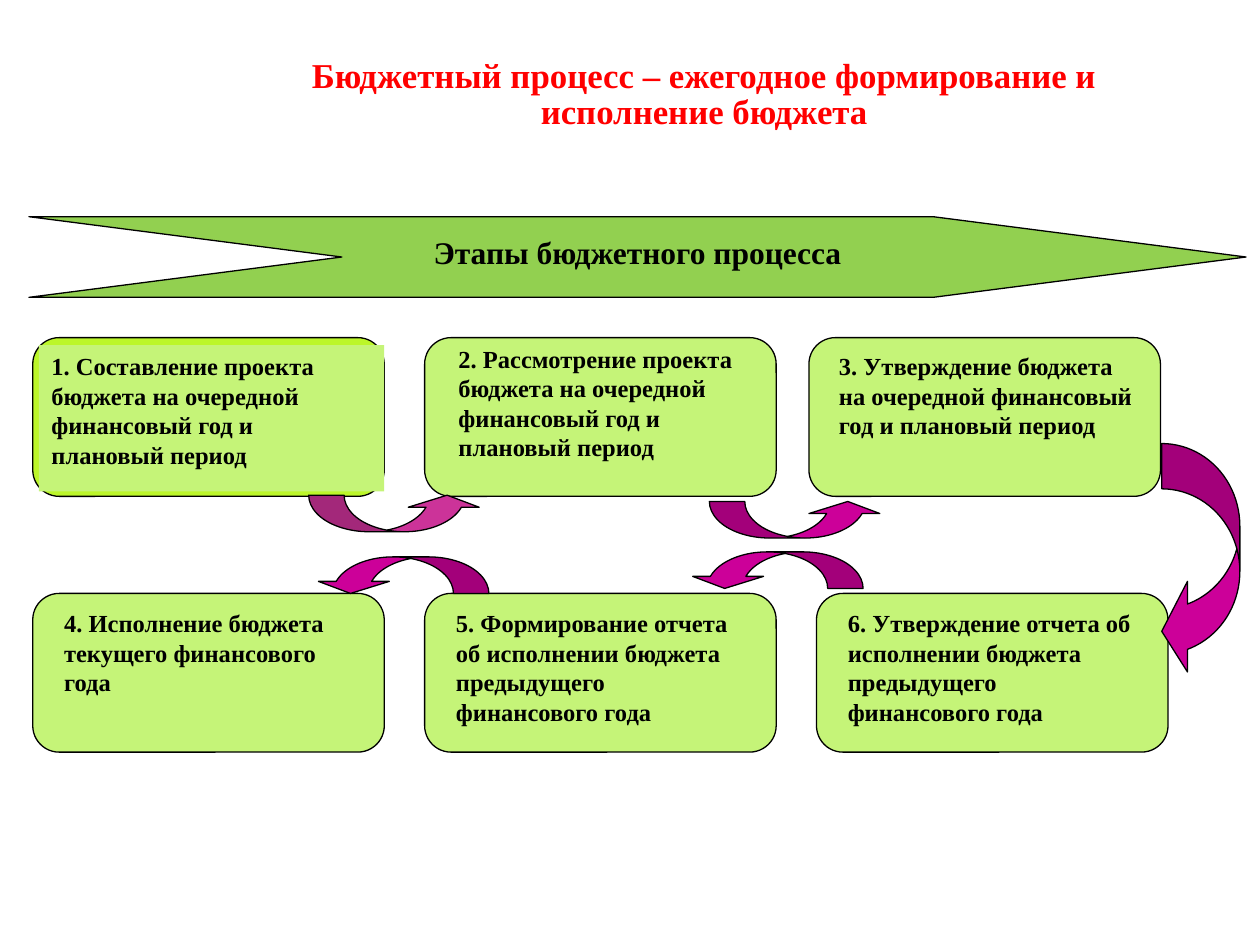
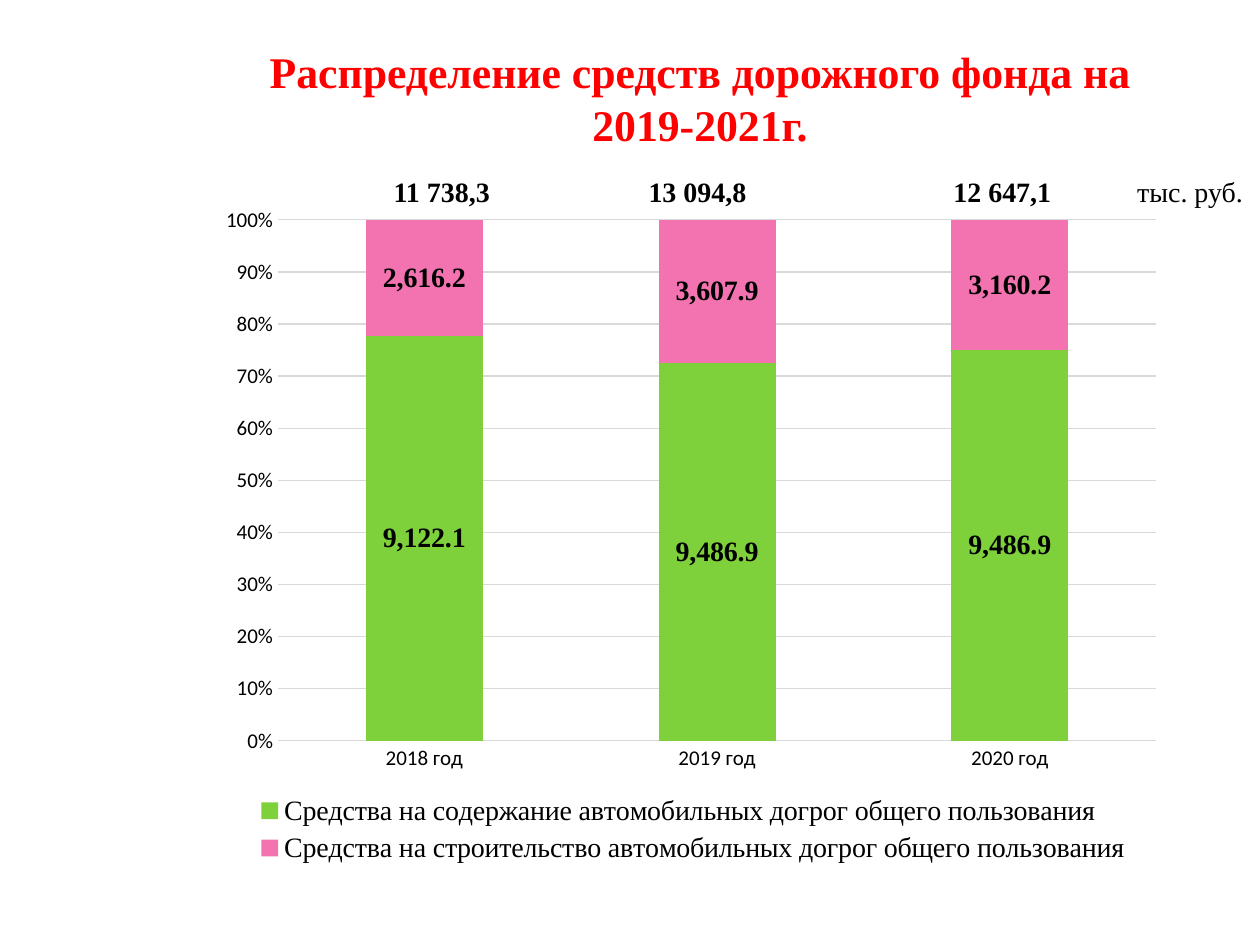
import pptx
import pptx.chart.data
import pptx.dml.color
import pptx.enum.chart
import pptx.enum.shapes
import pptx.enum.text
import pptx.oxml
import pptx.util

RGB = pptx.dml.color.RGBColor
SHAPE = pptx.enum.shapes.MSO_SHAPE
ALIGN = pptx.enum.text.PP_ALIGN
Pt = pptx.util.Pt

BLACK = RGB(0x00, 0x00, 0x00)
TITLE_RED = RGB(0xFF, 0x00, 0x00)
BANNER_GREEN = RGB(0x92, 0xD0, 0x50)
CARD_GREEN = RGB(0xC5, 0xF4, 0x78)
FIRST_CARD_GREEN = RGB(0xBC, 0xF6, 0x2A)
ARROW_MAGENTA = RGB(0xCC, 0x00, 0x99)
FIRST_ARROW_PINK = RGB(0xCC, 0x33, 0x99)
ROAD_GREEN = RGB(0x7F, 0xD1, 0x3B)
ROAD_PINK = RGB(0xF2, 0x73, 0xAF)
GRID_GREY = RGB(0xD9, 0xD9, 0xD9)
SERIF = "Times New Roman"
SANS = "Calibri"

deck = pptx.Presentation()
deck.slide_width = pptx.util.Inches(10)
deck.slide_height = pptx.util.Inches(7.5)
blank = deck.slide_layouts[6]
CELL = deck.slide_width / 100  # the slide is a grid of 100 columns by 75 rows


def add_text(slide, text, box, size=14, bold=True, color=BLACK, align=ALIGN.LEFT,
             spacing=None, inset_top=0.5, fill=None):
    """Place text in a box given in grid cells: left, top, width, height."""
    holder = slide.shapes.add_textbox(*[round(n * CELL) for n in box])
    if fill is not None:
        holder.fill.solid()
        holder.fill.fore_color.rgb = fill
    frame = holder.text_frame
    frame.word_wrap = True
    frame.margin_top = round(inset_top * CELL)
    frame.text = text
    for paragraph in frame.paragraphs:
        paragraph.alignment = align
        paragraph.line_spacing = spacing
        font = paragraph.runs[0].font
        font.name, font.size, font.bold = SERIF, Pt(size), bold
        font.color.rgb = color


def add_outlined(slide, kind, box, fill, adjustments=(), rotation=0):
    """Place a black-edged shape in a box given in grid cells."""
    shape = slide.shapes.add_shape(kind, *[round(n * CELL) for n in box])
    shape.shadow.inherit = False
    shape.fill.solid()
    shape.fill.fore_color.rgb = fill
    shape.line.color.rgb = BLACK
    shape.line.width = Pt(0.75)
    shape.rotation = rotation
    for index, value in enumerate(adjustments):
        shape.adjustments[index] = value


# Slide 1: stages of the budget process
stages = deck.slides.add_slide(blank)
add_outlined(stages, SHAPE.CHEVRON, (2.3, 17.2, 96.6, 6.4), BANNER_GREEN, [3.88])

CARD_LEFT, CARD_PITCH = 2.6, 31.1
CARD_WIDTH, CARD_HEIGHT = 27.9, 12.6
ROW_TOPS = (26.8, 47.1)
# wording, shift of the card, text offset in the card, text size, text fill
cards = [
    ("1. Составление проекта бюджета на очередной финансовый год и плановый период",
     0, (0.5, 0.6), (27.4, 11.6), CARD_GREEN),
    ("2. Рассмотрение проекта бюджета на очередной финансовый год и плановый период",
     0, (1.7, 0), (25.5, 12.3), None),
    ("3. Утверждение бюджета на очередной финансовый год и плановый период",
     -0.6, (1.4, 0.6), (25.5, 7.9), None),
    ("4. Исполнение бюджета текущего финансового года",
     0, (1.5, 0.7), (25.5, 7.9), None),
    ("5. Формирование отчета об исполнении бюджета предыдущего финансового года",
     0, (1.5, 0.7), (25.5, 7.9), None),
    ("6. Утверждение отчета об исполнении бюджета предыдущего финансового года",
     0, (1.5, 0.7), (25.5, 7.9), None),
]
for number, (wording, shift, offset, text_size, text_fill) in enumerate(cards):
    row, column = divmod(number, 3)
    left = CARD_LEFT + column * CARD_PITCH + shift
    top = ROW_TOPS[row]
    add_outlined(stages, SHAPE.FLOWCHART_ALTERNATE_PROCESS,
                 (left, top, CARD_WIDTH, CARD_HEIGHT),
                 FIRST_CARD_GREEN if number == 0 else CARD_GREEN)
    add_text(stages, wording, (left + offset[0], top + offset[1], *text_size),
             fill=text_fill)

add_text(stages, "Бюджетный процесс – ежегодное формирование и\nисполнение бюджета",
         (14.1, 3, 83.6, 10.3), size=19.9, color=TITLE_RED, align=ALIGN.CENTER,
         spacing=0.85, inset_top=1.8)
add_text(stages, "Этапы бюджетного процесса", (28.9, 18, 43.4, 4.7), size=18,
         align=ALIGN.CENTER)

for left, top, rotation, fill in [
    (24.5, 39.3, 0, FIRST_ARROW_PINK),
    (56.3, 39.8, 0, ARROW_MAGENTA),
    (25, 44.2, 180, ARROW_MAGENTA),
    (54.7, 43.8, 180, ARROW_MAGENTA),
]:
    add_outlined(stages, SHAPE.CURVED_UP_ARROW, (left, top, 13.8, 2.9), fill,
                 [0.97, 1.94, 0.33], rotation)
add_outlined(stages, SHAPE.CURVED_LEFT_ARROW, (92.2, 35.2, 6.2, 18.5), ARROW_MAGENTA,
             [0.58, 1.16, 0.33])

# Slide 2: road fund
road_fund = deck.slides.add_slide(blank)
spending = pptx.chart.data.CategoryChartData(number_format="#,##0.0")
spending.categories = ["2018 год", "2019 год", "2020 год"]
spending.add_series("Средства на содержание автомобильных догрог общего пользования",
                    (9122.1, 9486.9, 9486.9))
spending.add_series("Средства на строительство автомобильных догрог общего пользования",
                    (2616.2, 3607.9, 3160.2))
chart = road_fund.shapes.add_chart(
    pptx.enum.chart.XL_CHART_TYPE.COLUMN_STACKED_100,
    *[round(n * CELL) for n in (16.7, 15.3, 76.6, 53.7)], spending).chart
chart.has_title = False
chart.font.name, chart.font.size = SANS, Pt(10)
chart.font.color.rgb = BLACK

plot = chart.plots[0]
plot.gap_width, plot.overlap = 150, 100
plot.vary_by_categories = False
for series, color in zip(plot.series, (ROAD_GREEN, ROAD_PINK)):
    series.format.fill.solid()
    series.format.fill.fore_color.rgb = color
    labels = series.data_labels
    labels.show_value = True
    labels.number_format, labels.number_format_is_linked = "#,##0.0", False
    labels.font.name, labels.font.size, labels.font.bold = SERIF, Pt(16), True
    labels.font.color.rgb = BLACK

years, shares = chart.category_axis, chart.value_axis
for axis in (years, shares):
    axis.major_tick_mark = pptx.enum.chart.XL_TICK_MARK.NONE
    axis.minor_tick_mark = pptx.enum.chart.XL_TICK_MARK.NONE
    axis.tick_labels.font.name = SANS
    axis.tick_labels.font.size = Pt(12)
    axis.tick_labels.font.color.rgb = BLACK
shares.tick_labels.number_format = "0%"
shares.tick_labels.number_format_is_linked = False
shares.format.line.fill.background()
for line in (years.format.line, shares.major_gridlines.format.line):
    line.color.rgb = GRID_GREY
    line.width = Pt(0.75)

chart.has_legend = True
legend = chart.legend
legend.position = pptx.enum.chart.XL_LEGEND_POSITION.BOTTOM
legend.include_in_layout = False
legend.font.name, legend.font.size = SERIF, Pt(16)
legend.font.color.rgb = BLACK

plot_area = chart.element.chart.plotArea
for old_layout in plot_area.findall(pptx.oxml.ns.qn("c:layout")):
    plot_area.remove(old_layout)
plot_area.insert(0, pptx.oxml.parse_xml(
    f'<c:layout {pptx.oxml.ns.nsdecls("c")}><c:manualLayout>'
    '<c:layoutTarget val="inner"/><c:xMode val="edge"/><c:yMode val="edge"/>'
    '<c:x val="0.07"/><c:y val="0.04"/><c:w val="0.91"/><c:h val="0.77"/>'
    '</c:manualLayout></c:layout>'))

add_text(road_fund, "Распределение средств дорожного фонда на 2019-2021г.",
         (16.4, 3.1, 78.3, 8.6), size=25, color=TITLE_RED, align=ALIGN.CENTER)
for wording, left, bold in [
    ("11 738,3", 29.6, True),
    ("13 094,8", 49.9, True),
    ("12 647,1", 74.1, True),
    ("тыс. руб.", 89, False),
]:
    add_text(road_fund, wording, (left, 13.4, 10.9, 3.7), size=16, bold=bold,
             align=ALIGN.CENTER)

deck.save("out.pptx")
